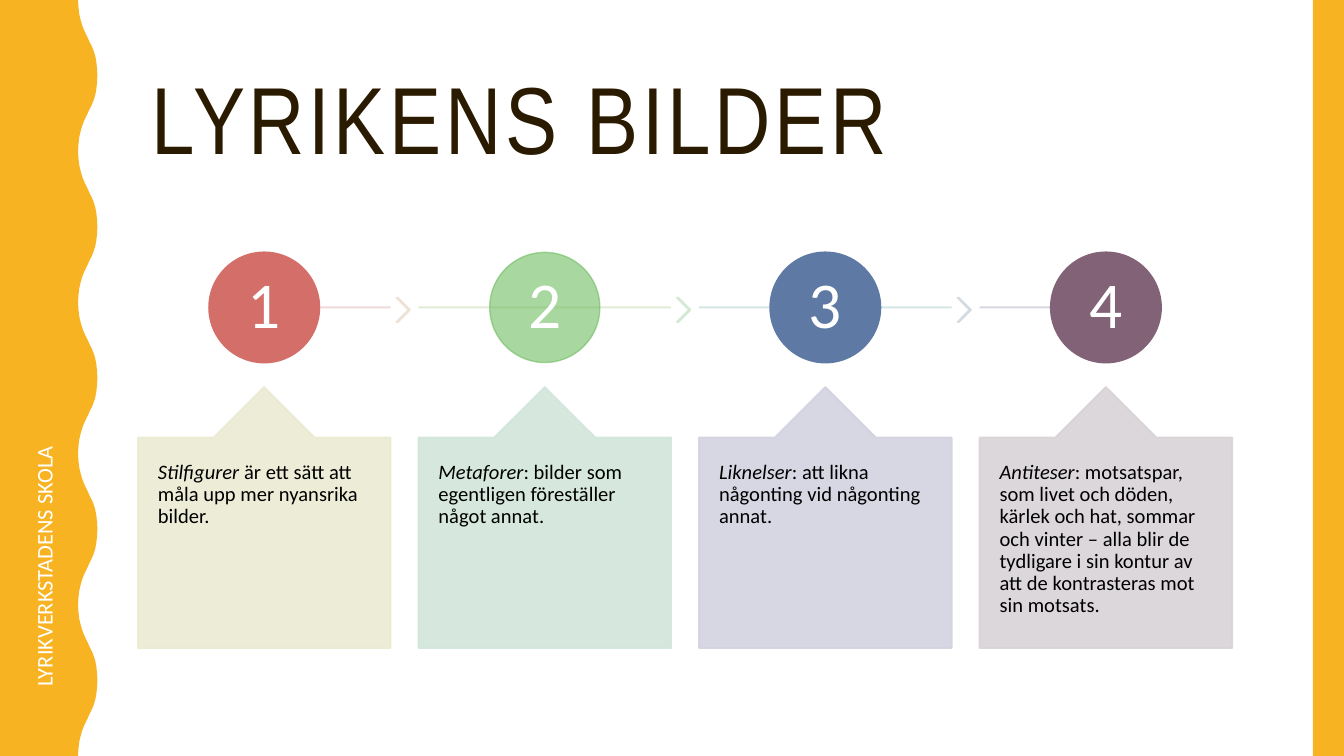
from collections import namedtuple
from dataclasses import dataclass

from lxml import etree
from pptx import Presentation
from pptx.dml.color import RGBColor
from pptx.enum.shapes import MSO_CONNECTOR, MSO_SHAPE
from pptx.enum.text import MSO_ANCHOR, MSO_AUTO_SIZE, PP_ALIGN
from pptx.oxml.ns import qn
from pptx.util import Pt

RECT, OVAL, CHEVRON = MSO_SHAPE.RECTANGLE, MSO_SHAPE.OVAL, MSO_SHAPE.CHEVRON
CALLOUT = MSO_SHAPE.UP_ARROW_CALLOUT
STRAIGHT = MSO_CONNECTOR.STRAIGHT
LEFT, CENTER = PP_ALIGN.LEFT, PP_ALIGN.CENTER
TOP, MIDDLE = MSO_ANCHOR.TOP, MSO_ANCHOR.MIDDLE

Box = namedtuple("Box", "x y w h")
Step = namedtuple("Step", "term text circle circle_alpha edge line chevron callout")


@dataclass(frozen=True)
class Theme:
    accent: str = "F8B323"
    title: str = "2A1A00"
    body: str = "000000"
    light: str = "FFFFFF"
    title_font: str = "Arial Narrow"
    body_font: str = "Calibri"
    title_size: float = 51
    title_spacing: float = 2
    number_size: float = 35
    text_size: float = 11
    label_size: float = 12
    soft: int = 90


THEME = Theme()
STEPS = [
    Step("Stilfigurer", " är ett sätt att måla upp mer nyansrika bilder.",
         "D36F68", 100, 1, "EFD5D4", "EDE1D3", "EBEBD3"),
    Step("Metaforer", ": bilder som egentligen föreställer något annat.",
         "70BD61", 60, 0, "DEE9D2", "D2E8D2", "D2E6DB"),
    Step("Liknelser", ": att likna någonting vid någonting annat.",
         "5E79A3", 100, 1, "D2E4E3", "D2DAE1", "D2D3DF"),
    Step("Antiteser", ": motsatspar, som livet och döden, kärlek och hat, sommar och "
         "vinter – alla blir de tydligare i sin kontur av att de kontrasteras mot "
         "sin motsats.",
         "826276", 100, 1, "D7D2DD", None, "D8D3D6"),
]
HALF_WAVE = [(0, 0), (0.3, 4.2), (0.7, 7.6), (1.4, 10.6), (2.2, 13.4),
             (3.1, 15.8), (4.1, 18), (5.2, 20.2), (6.2, 22.5), (7.3, 24.6),
             (8.3, 27), (9.2, 29.8), (9.8, 32.9), (10.2, 36.4), (10.4, 40.5)]
WAVE_DEPTH, WAVE_LENGTH, WAVE_COUNT = 10.4, 81, 5


def set_color(fill, color, alpha=100):
    fill.solid()
    fill.fore_color.rgb = RGBColor.from_string(color)
    if alpha < 100:
        clr = fill._xPr.find(qn("a:solidFill"))[0]
        etree.SubElement(clr, qn("a:alpha")).set("val", str(alpha * 1000))


def paint(sp, color, alpha=100, line_width=None):
    sp.shadow.inherit = False
    set_color(sp.fill, color, alpha)
    if line_width is None:
        sp.line.fill.background()
    else:
        sp.line.width = Pt(line_width)
        set_color(sp.line.fill, color, alpha)


def add_shape(slide, kind, box, color, alpha=100, line_width=None):
    sp = slide.shapes.add_shape(kind, *map(Pt, box))
    paint(sp, color, alpha, line_width)
    return sp


def format_text(sp, inset, size, color, font, align, anchor, spacing=None):
    tf = sp.text_frame
    tf.word_wrap = True
    tf.auto_size = MSO_AUTO_SIZE.NONE
    tf.vertical_anchor = anchor
    tf.margin_left = tf.margin_right = Pt(inset[0])
    tf.margin_top = tf.margin_bottom = Pt(inset[1])
    p = tf.paragraphs[0]
    p.alignment = align
    p.line_spacing = spacing
    p.font.size = Pt(size)
    p.font.name = font
    p.font.color.rgb = RGBColor.from_string(color)
    return p


def place_title(slide, box, text):
    sp = slide.shapes.title
    sp.left, sp.top, sp.width, sp.height = map(Pt, box)
    p = format_text(sp, (7.2, 3.6), THEME.title_size, THEME.title,
                    THEME.title_font, LEFT, MIDDLE, 0.9)
    r = p.add_run()
    r.text = text
    r.font._element.set("spc", str(int(THEME.title_spacing * 100)))


def place_sidebar(slide, box, label):
    trough = box.w - WAVE_DEPTH
    wave = HALF_WAVE + [(dx, WAVE_LENGTH - dy) for dx, dy in HALF_WAVE[-2::-1]]
    edge = [(Pt(box.x + trough + dx), Pt(box.y + n * WAVE_LENGTH + dy))
            for n in range(WAVE_COUNT) for dx, dy in wave]
    fb = slide.shapes.build_freeform(Pt(box.x), Pt(box.y), scale=1.0)
    fb.add_line_segments(edge + [(Pt(box.x), Pt(box.y + box.h))], close=True)
    paint(fb.convert_to_shape(), THEME.accent)

    w, h = 202, 80
    center_x, center_y = box.x + 23.4, box.y + 303.5
    sp = slide.shapes.add_textbox(Pt(center_x - w / 2), Pt(center_y - h / 2), Pt(w), Pt(h))
    sp.rotation = 270
    p = format_text(sp, (7.2, 7.2), THEME.label_size, THEME.light,
                    THEME.body_font, CENTER, MIDDLE)
    p.add_run().text = label


def place_step(slide, box, number, step):
    diameter = 59
    center_x, center_y = box.x + box.w / 2, box.y + diameter / 2

    line_start = center_x + 7.3 if number == 1 else box.x
    line_end = box.x + box.w if step.chevron else center_x
    cx = slide.shapes.add_connector(STRAIGHT, Pt(line_start), Pt(center_y),
                                    Pt(line_end), Pt(center_y))
    cx.line.width = Pt(1)
    set_color(cx.line.fill, step.line, THEME.soft)
    etree.SubElement(cx._element.spPr, qn("a:effectLst"))

    if step.chevron:
        sp = add_shape(slide, CHEVRON, Box(box.x + box.w + 3.2, center_y - 5.2, 7.2, 13),
                       step.chevron, THEME.soft, 1)
        sp.adjustments[0] = 0.9

    sp = add_shape(slide, OVAL, Box(center_x - diameter / 2, box.y, diameter, diameter),
                   step.circle, step.circle_alpha, step.edge)
    p = format_text(sp, (2, 2), THEME.number_size, THEME.light,
                    THEME.body_font, CENTER, MIDDLE, 0.9)
    p.add_run().text = str(number)

    callout_top = 72.2
    sp = add_shape(slide, CALLOUT,
                   Box(box.x, box.y + callout_top, box.w, box.h - callout_top),
                   step.callout, THEME.soft, 1)
    for i, value in enumerate((0.5, 0.2, 0.2, 1)):
        sp.adjustments[i] = value
    p = format_text(sp, (10.7, 13), THEME.text_size, THEME.body,
                    THEME.body_font, LEFT, TOP, 0.9)
    r = p.add_run()
    r.text = step.term
    r.font.italic = True
    p.add_run().text = step.text


def place_steps(slide, box, steps):
    gap = 15
    w = (box.w - gap * (len(steps) - 1)) / len(steps)
    for i, step in enumerate(steps):
        place_step(slide, Box(box.x + i * (w + gap), box.y, w, box.h), i + 1, step)


def main():
    prs = Presentation()
    prs.slide_width, prs.slide_height = Pt(720), Pt(405)
    slide = prs.slides.add_slide(prs.slide_layouts[5])
    place_title(slide, Box(74, 22.3, 601.2, 88), "LYRIKENS BILDER")
    place_sidebar(slide, Box(0, 0, 52.2, 405), "LYRIKVERKSTADENS SKOLA")
    add_shape(slide, RECT, Box(703.3, 0, 16.7, 405), THEME.accent)
    place_steps(slide, Box(73.9, 135.2, 586.2, 212), STEPS)
    prs.save("out.pptx")


if __name__ == "__main__":
    main()
